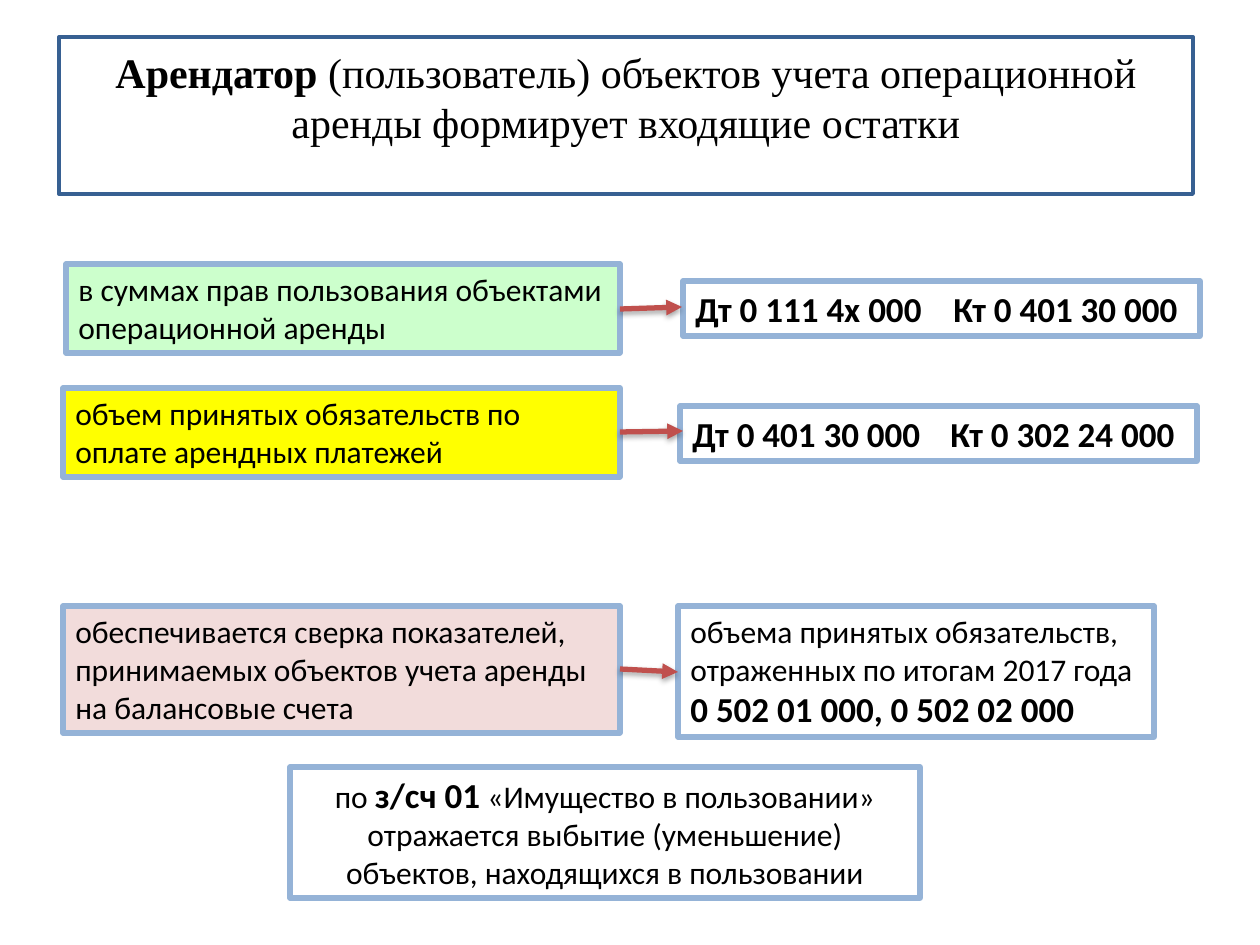
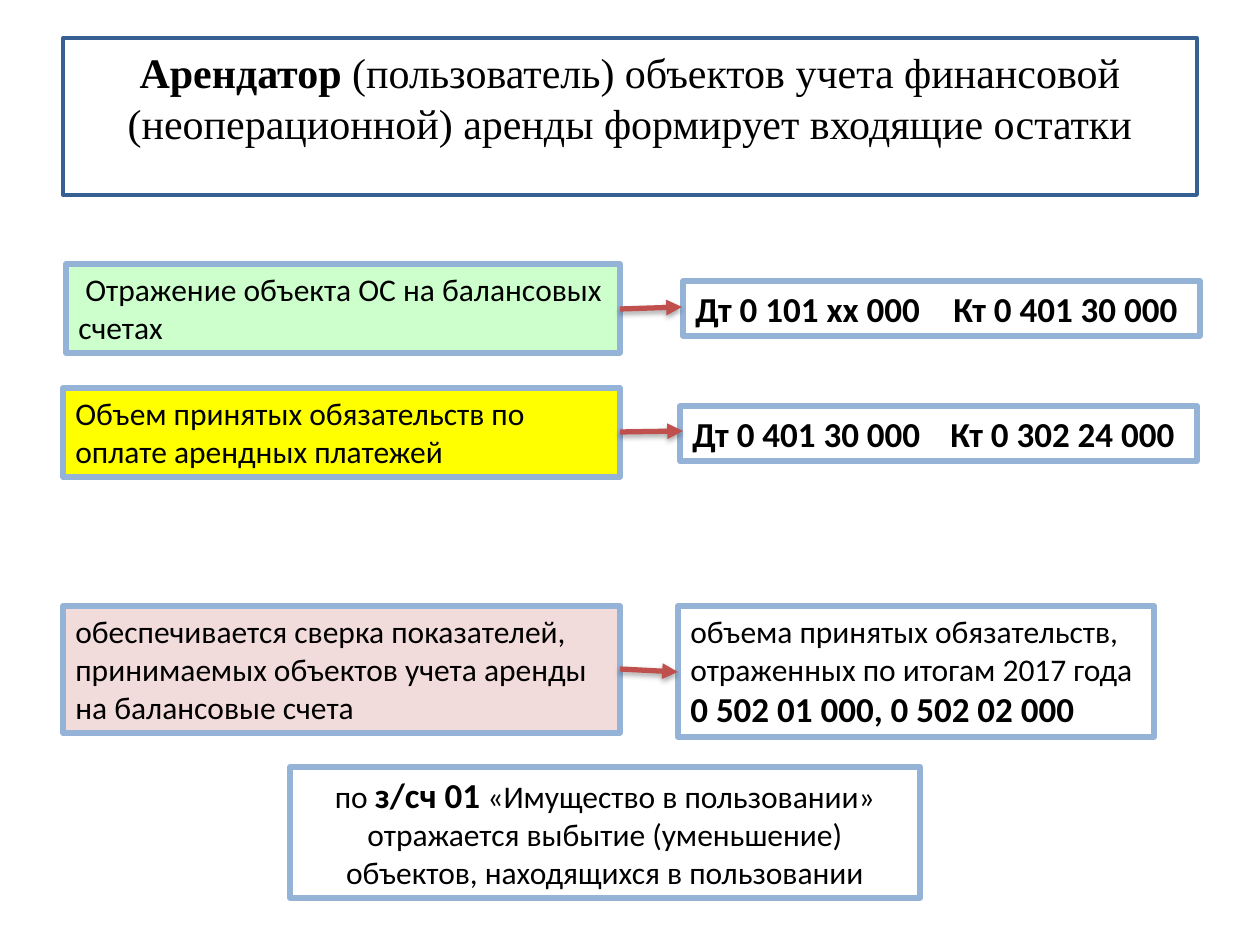
from lxml import etree
from pptx import Presentation
from pptx import util as u
from pptx.dml.color import RGBColor
from pptx.enum import shapes, text
from pptx.oxml import parse_xml
from pptx.oxml.ns import nsdecls, qn

NAVY = RGBColor(0x37, 0x60, 0x92)
BLUE = RGBColor(0x95, 0xB3, 0xD7)
RED = RGBColor(0xC0, 0x50, 0x4D)
GREEN = RGBColor(0xCC, 0xFF, 0xCC)
YELLOW = RGBColor(0xFF, 0xFF, 0x00)
PINK = RGBColor(0xF2, 0xDC, 0xDB)
BLACK = RGBColor(0x00, 0x00, 0x00)

SCALE = 914400 / 126
CREDIT_TAB = 258
ARROW_SHADOW = (
    f'<a:effectLst {nsdecls("a")}>'
    '<a:outerShdw blurRad="40000" dist="23000" dir="5400000" rotWithShape="0">'
    '<a:srgbClr val="000000"><a:alpha val="35000"/></a:srgbClr>'
    '</a:outerShdw></a:effectLst>'
)


def px(length):
    return u.Emu(round(length * SCALE))


def write(page, spans, at, fill=None, line=BLUE, weight=3, font="Calibri",
          size=18, bold_size=20, align=text.PP_ALIGN.LEFT, grow=True, top=6, tab=None):
    box = page.shapes.add_shape(shapes.MSO_SHAPE.RECTANGLE, *map(px, at))
    box.shadow.inherit = False
    if fill is None:
        box.fill.background()
    else:
        box.fill.solid()
        box.fill.fore_color.rgb = fill
    box.line.color.rgb = line
    box.line.width = u.Pt(weight)
    frame = box.text_frame
    frame.word_wrap = True
    frame.vertical_anchor = text.MSO_ANCHOR.TOP
    frame.margin_top = px(top)
    if grow:
        frame.auto_size = text.MSO_AUTO_SIZE.SHAPE_TO_FIT_TEXT
    para = frame.paragraphs[0]
    para.alignment = align
    if tab:
        stops = etree.SubElement(para._p.get_or_add_pPr(), qn("a:tabLst"))
        etree.SubElement(stops, qn("a:tab"), pos=str(px(tab)), algn="l")
    for words, bold in spans:
        span = para.add_run()
        span.text = words
        span.font.name = font
        span.font.size = u.Pt(bold_size if bold else size)
        span.font.bold = bold
        span.font.color.rgb = BLACK


PAGES = [
    {
        "title_at": (59, 37, 1134, 157),
        "title": " (пользователь) объектов учета операционной аренды формирует входящие остатки",
        "rights": "в суммах прав пользования объектами операционной аренды",
        "rights_entry": "Дт 0 111 4х 000\tКт 0 401 30 000",
        "duties": "объем принятых обязательств по оплате арендных платежей",
    },
    {
        "title_at": (63, 38, 1134, 157),
        "title": " (пользователь) объектов учета финансовой (неоперационной) аренды формирует входящие остатки",
        "rights": " Отражение объекта ОС на балансовых счетах",
        "rights_entry": "Дт 0 101 хх 000\tКт 0 401 30 000",
        "duties": "Объем принятых обязательств по оплате арендных платежей",
    },
]
DUTIES_ENTRY = "Дт 0 401 30 000\tКт 0 302 24 000"
CHECK = "обеспечивается сверка показателей, принимаемых объектов учета аренды на балансовые счета"
CHECK_AGAINST = [
    ("объема принятых обязательств, отраженных по итогам 2017 года ", False),
    ("0\u00a0502\u00a001\u00a0000, 0\u00a0502\u00a002\u00a0000".replace("\u00a0", chr(160)), True),
]
OFF_BALANCE = [
    ("по ", False),
    ("з/сч 01", True),
    (" «Имущество в пользовании» отражается выбытие (уменьшение) объектов, находящихся в пользовании", False),
]
ARROWS = [(620, 309, 682, 307), (620, 432, 683, 431), (620, 669, 678, 672)]

deck = Presentation()
deck.slide_width, deck.slide_height = px(1260), px(945)

for content in PAGES:
    page = deck.slides.add_slide(deck.slide_layouts[6])
    write(page, [("Арендатор", True), (content["title"], False)], content["title_at"],
          line=NAVY, weight=2.25, font="Times New Roman", size=24, bold_size=24,
          align=text.PP_ALIGN.CENTER, grow=False, top=9)

    for words, at, fill in [
        (content["rights"], (66, 264, 554, 89), GREEN),
        (content["duties"], (63, 388, 557, 89), YELLOW),
        (CHECK, (63, 606, 557, 127), PINK),
    ]:
        write(page, [(words, False)], at, fill=fill)

    for entry, at in [
        (content["rights_entry"], (683, 281, 517, 55)),
        (DUTIES_ENTRY, (680, 406, 517, 55)),
    ]:
        write(page, [(entry, True)], at, tab=CREDIT_TAB)

    write(page, CHECK_AGAINST, (678, 606, 476, 131))
    write(page, OFF_BALANCE, (290, 767, 630, 131), align=text.PP_ALIGN.CENTER)

    for ends in ARROWS:
        arrow = page.shapes.add_connector(shapes.MSO_CONNECTOR.STRAIGHT, *map(px, ends))
        arrow.line.color.rgb = RED
        arrow.line.width = u.Pt(3)
        etree.SubElement(arrow.line._get_or_add_ln(), qn("a:tailEnd"), type="triangle")
        arrow._element.spPr.append(parse_xml(ARROW_SHADOW))

deck.save("out.pptx")
